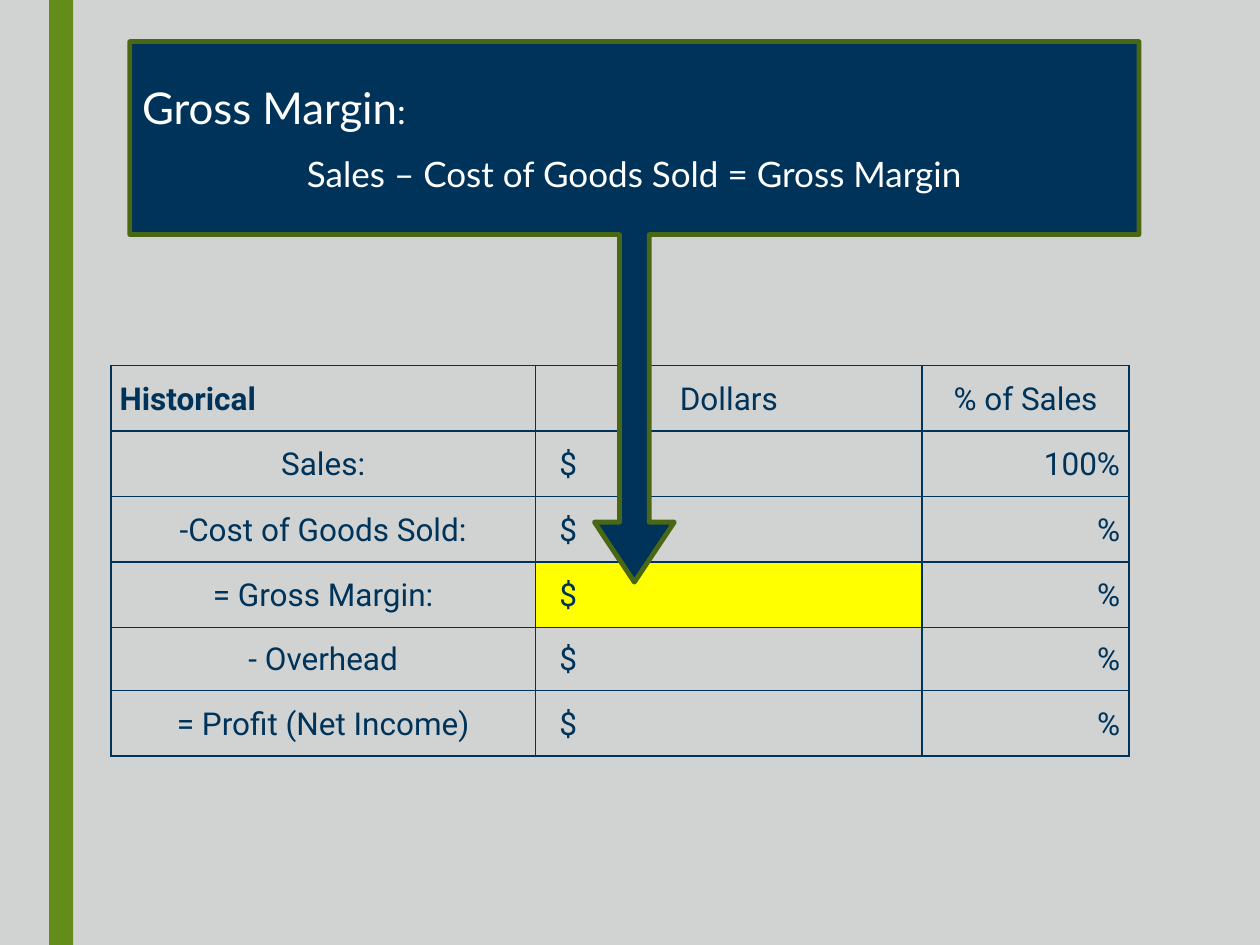
from dataclasses import dataclass

from lxml.etree import SubElement
from pptx import Presentation
from pptx.dml.color import RGBColor
from pptx.enum.shapes import MSO_SHAPE as Preset
from pptx.enum.text import MSO_ANCHOR as Anchor, PP_ALIGN as Align
from pptx.oxml import parse_xml
from pptx.oxml.ns import nsdecls, qn
from pptx.util import Inches, Pt


@dataclass(frozen=True)
class Theme:
    background: str = "D1D3D3"
    navy: str = "003359"
    green: str = "648C1A"
    dark_green: str = "4A6813"
    highlight: str = "FFFF00"
    white: str = "FFFFFF"
    title_font: str = "Lato"
    table_font: str = "Roboto"
    title_size: int = 25
    formula_size: int = 20
    table_size: int = 18


THEME = Theme()

ROWS = [
    ("Historical", "Dollars", "% of Sales"),
    ("Sales:", "$", "100%"),
    ("-Cost of Goods Sold:", "$", "%"),
    ("= Gross Margin:", "$", "%"),
    ("- Overhead", "$", "%"),
    ("= Profit (Net Income)", "$", "%"),
]
COLUMN_WIDTHS = (3.37, 3.07, 1.64)
ROW_HEIGHTS = (0.52, 0.52, 0.52, 0.52, 0.5, 0.52)
HEADER_ALIGNS = (Align.LEFT, Align.CENTER, Align.CENTER)
BODY_ALIGNS = (Align.CENTER, Align.LEFT, Align.RIGHT)
HIGHLIGHTED = (3, 1)
CELL_MARGIN = 0.07
DOLLAR_MARGIN = 0.19


def paint(fill, color):
    fill.solid()
    fill.fore_color.rgb = RGBColor.from_string(color)


def style_font(font, name, size, color, bold=False):
    font.name = name
    font.size = Pt(size)
    font.bold = bold
    font.color.rgb = RGBColor.from_string(color)


def add_preset(slide, preset, left, top, width, height, color):
    shape = slide.shapes.add_shape(
        preset, Inches(left), Inches(top), Inches(width), Inches(height))
    shape.shadow.inherit = False
    paint(shape.fill, color)
    shape.line.fill.background()
    return shape


def add_borders(cell, color, width):
    """Line all four sides; border elements must come before the cell's fill."""
    properties = cell._tc.get_or_add_tcPr()
    for position, side in enumerate(("lnL", "lnR", "lnT", "lnB")):
        border = parse_xml(f'<a:{side} {nsdecls("a")} w="{Pt(width)}"/>')
        fill = SubElement(border, qn("a:solidFill"))
        SubElement(fill, qn("a:srgbClr"), val=color)
        properties.insert(position, border)


def fill_cell(cell, text, align, left_margin, bold, highlighted):
    cell.margin_left, cell.margin_right = Inches(left_margin), Inches(CELL_MARGIN)
    cell.margin_top = cell.margin_bottom = 0
    cell.vertical_anchor = Anchor.MIDDLE
    if highlighted:
        paint(cell.fill, THEME.highlight)
    else:
        cell.fill.background()
    add_borders(cell, THEME.navy, 1)
    paragraph = cell.text_frame.paragraphs[0]
    paragraph.text = text
    paragraph.alignment = align
    paragraph.line_spacing = 1.07
    style_font(paragraph.font, THEME.table_font, THEME.table_size, THEME.navy, bold)


def add_margin_table(slide):
    table = slide.shapes.add_table(
        len(ROWS), len(COLUMN_WIDTHS), Inches(0.88), Inches(2.9),
        Inches(sum(COLUMN_WIDTHS)), Inches(sum(ROW_HEIGHTS))).table
    table.first_row = table.horz_banding = False
    for column, width in zip(table.columns, COLUMN_WIDTHS):
        column.width = Inches(width)
    for row, height in zip(table.rows, ROW_HEIGHTS):
        row.height = Inches(height)
    for r, texts in enumerate(ROWS):
        aligns = BODY_ALIGNS if r else HEADER_ALIGNS
        for c, (text, align) in enumerate(zip(texts, aligns)):
            left_margin = DOLLAR_MARGIN if text == "$" else CELL_MARGIN
            fill_cell(table.cell(r, c), text, align, left_margin,
                      bold=(r, c) == (0, 0), highlighted=(r, c) == HIGHLIGHTED)


def add_formula_callout(slide):
    callout = add_preset(slide, Preset.DOWN_ARROW_CALLOUT,
                         1.03, 0.33, 8.01, 4.29, THEME.navy)
    for index, value in enumerate((0.055, 0.074, 0.111, 0.357)):
        callout.adjustments[index] = value
    paint(callout.line.fill, THEME.dark_green)
    callout.line.width = Pt(2.75)

    frame = callout.text_frame
    frame.word_wrap = True
    frame.vertical_anchor = Anchor.MIDDLE
    title = frame.paragraphs[0]
    title.alignment = Align.LEFT
    for text, size in (("Gross Margin", THEME.title_size), (":", THEME.formula_size)):
        run = title.add_run()
        run.text = text
        style_font(run.font, THEME.title_font, size, THEME.white)
    formula = frame.add_paragraph()
    formula.text = "Sales – Cost of Goods Sold = Gross Margin"
    formula.alignment = Align.CENTER
    formula.space_before = Pt(11)
    style_font(formula.font, THEME.title_font, THEME.formula_size, THEME.white)


def main():
    deck = Presentation()
    deck.slide_width, deck.slide_height = Inches(10), Inches(7.5)
    slide = deck.slides.add_slide(deck.slide_layouts[6])
    paint(slide.background.fill, THEME.background)
    add_preset(slide, Preset.RECTANGLE, 0.39, 0, 0.19, 7.5, THEME.green)
    add_margin_table(slide)
    add_formula_callout(slide)
    deck.save("out.pptx")


if __name__ == "__main__":
    main()
